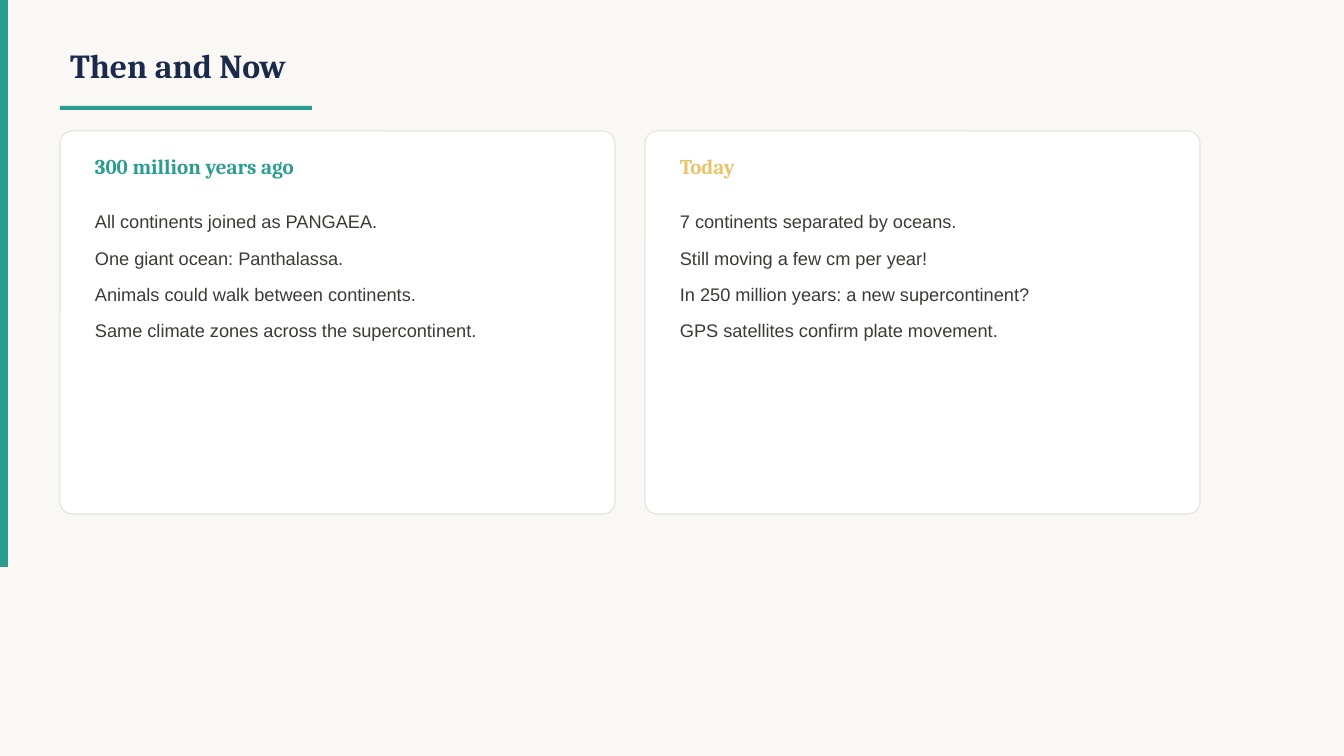
from pptx import Presentation
from pptx.dml.color import RGBColor
from pptx.enum.shapes import MSO_SHAPE as Shape
from pptx.enum.text import MSO_ANCHOR as Anchor, PP_ALIGN as Align
from pptx.util import Emu, Pt

TITLE = "Then and Now"
TEAL, GOLD, NAVY, INK = "2A9D8F", "E9C46A", "1B2A4A", "3D3A36"
PAPER, WHITE, BORDER = "FAF8F5", "FFFFFF", "E5E2DC"
HEADING_FONT, BODY_FONT = "Cambria", "Arial"

ERAS = [
    ("300 million years ago", TEAL, [
        "All continents joined as PANGAEA.",
        "One giant ocean: Panthalassa.",
        "Animals could walk between continents.",
        "Same climate zones across the supercontinent.",
    ]),
    ("Today", GOLD, [
        "7 continents separated by oceans.",
        "Still moving a few cm per year!",
        "In 250 million years: a new supercontinent?",
        "GPS satellites confirm plate movement.",
    ]),
]

PX = 914400 / 100.8
SLIDE_W, SLIDE_H = 1344, 756
MARGIN = 60
CARD_TOP, CARD_W, CARD_H, CARD_GAP = 131, 555, 383, 30
PADDING = 25


def px(*lengths):
    return [Emu(round(length * PX)) for length in lengths]


def rgb(code):
    return RGBColor.from_string(code)


def add_panel(kind, box, fill, line=None):
    panel = slide.shapes.add_shape(kind, *px(*box))
    panel.shadow.inherit = False
    panel.fill.solid()
    panel.fill.fore_color.rgb = rgb(fill)
    if line:
        panel.line.color.rgb = rgb(line)
        panel.line.width = Pt(0.75)
    else:
        panel.line.fill.background()
    return panel


def write(frame, lines, size, font, color, bold=False, anchor=Anchor.MIDDLE):
    """Fill a text frame with one left-aligned paragraph per line."""
    frame.word_wrap = True
    frame.vertical_anchor = anchor
    for index, line in enumerate(lines):
        paragraph = frame.add_paragraph() if index else frame.paragraphs[0]
        paragraph.alignment = Align.LEFT
        run = paragraph.add_run()
        run.text = line
        run.font.size, run.font.name, run.font.bold = Pt(size), font, bold
        run.font.color.rgb = rgb(color)


def add_text(box, *args, **options):
    frame = slide.shapes.add_textbox(*px(*box)).text_frame
    write(frame, *args, **options)
    return frame


deck = Presentation()
deck.slide_width, deck.slide_height = px(SLIDE_W, SLIDE_H)
slide = deck.slides.add_slide(deck.slide_layouts[5])
slide.background.fill.solid()
slide.background.fill.fore_color.rgb = rgb(PAPER)

add_panel(Shape.RECTANGLE, (0, 0, 8, 567), TEAL)

title = slide.shapes.title
title.left, title.top, title.width, title.height = px(MARGIN, 30, 1008, 71)
write(title.text_frame, [TITLE], 24, HEADING_FONT, NAVY, bold=True)
add_panel(Shape.RECTANGLE, (MARGIN, 106, 252, 4), TEAL)

for column, (heading, accent, facts) in enumerate(ERAS):
    left = MARGIN + column * (CARD_W + CARD_GAP)
    card = add_panel(Shape.ROUNDED_RECTANGLE,
                     (left, CARD_TOP, CARD_W, CARD_H), WHITE, BORDER)
    card.adjustments[0] = 0.032

    text_left, text_width = left + PADDING, CARD_W - 2 * PADDING
    add_text((text_left, CARD_TOP + 15, text_width, 40),
             [heading], 15, HEADING_FONT, accent, bold=True)
    body = add_text((text_left, CARD_TOP + 66, text_width, 292),
                    facts, 13, BODY_FONT, INK, anchor=Anchor.TOP)
    for paragraph in body.paragraphs:
        paragraph.line_spacing = 1.4
        paragraph.space_after = Pt(4)

deck.save("out.pptx")
